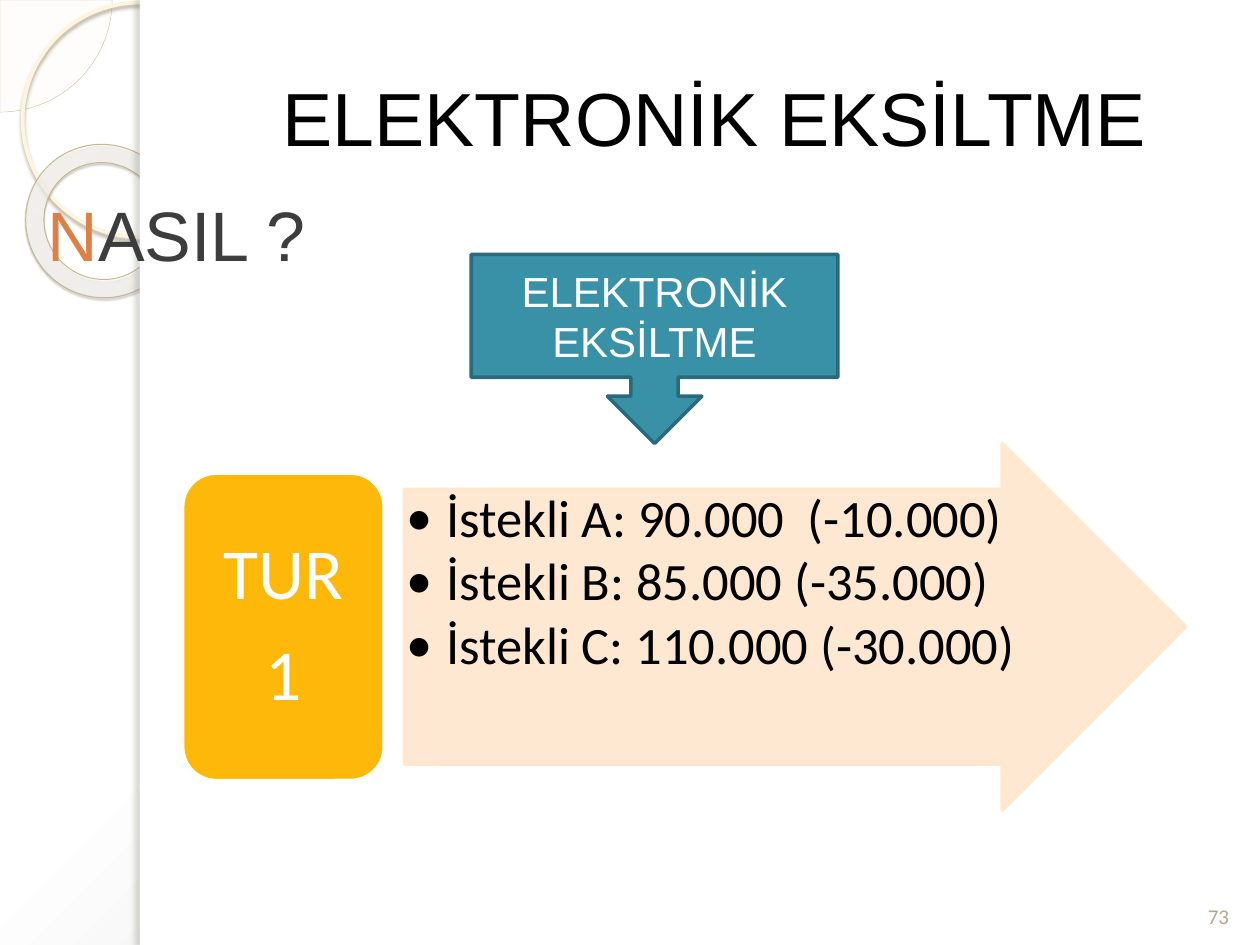
from lxml.etree import SubElement
from pptx import Presentation
from pptx.dml.color import RGBColor
from pptx.enum.shapes import MSO_SHAPE
from pptx.enum.text import MSO_ANCHOR, MSO_AUTO_SIZE, PP_ALIGN
from pptx.oxml import parse_xml
from pptx.oxml.ns import nsdecls, qn
from pptx.util import Inches, Pt


def rgb(color):
    return RGBColor.from_string(color)


def inches(box):
    return [Inches(length) for length in box]


def set_alpha(fill_format_parent, percent):
    """Make every solid colour below the given element translucent."""
    for color in fill_format_parent.iter(qn("a:srgbClr")):
        SubElement(color, qn("a:alpha")).set("val", str(percent * 1000))


def gradient_xml(stops, focus):
    """Circular gradient; stops are (position, colour, opacity) in percent."""
    stop_xml = "".join(
        f'<a:gs pos="{position * 1000}"><a:srgbClr val="{color}">'
        f'<a:alpha val="{opacity * 1000}"/></a:srgbClr></a:gs>'
        for position, color, opacity in stops)
    edges = " ".join(f'{side}="{value * 1000}"' for side, value in zip("ltrb", focus))
    return parse_xml(
        f'<a:gradFill {nsdecls("a")} rotWithShape="1"><a:gsLst>{stop_xml}</a:gsLst>'
        f'<a:path path="circle"><a:fillToRect {edges}/></a:path></a:gradFill>')


def replace_solid_fill(parent, gradient):
    solid = parent.find(qn("a:solidFill"))
    parent.replace(solid, gradient)


def add_shadow(shape, color, opacity, blur, distance, angle):
    effects = shape._element.spPr.find(qn("a:effectLst"))
    effects.append(parse_xml(
        f'<a:outerShdw {nsdecls("a")} blurRad="{Pt(blur)}" dist="{Pt(distance)}" '
        f'dir="{angle * 60000}" algn="tl" rotWithShape="0"><a:srgbClr val="{color}">'
        f'<a:alpha val="{opacity * 1000}"/></a:srgbClr></a:outerShdw>'))


def add_block(slide, kind, box, fill=None, line=None, width=1, adjust=()):
    block = slide.shapes.add_shape(kind, *inches(box))
    block.shadow.inherit = False
    for index, value in enumerate(adjust):
        block.adjustments[index] = value
    if fill:
        block.fill.solid()
        block.fill.fore_color.rgb = rgb(fill)
    else:
        block.fill.background()
    if line:
        block.line.color.rgb = rgb(line)
        block.line.width = Pt(width)
    else:
        block.line.fill.background()
    return block


def write(shape, paragraphs, size, color, font="Arial", align=PP_ALIGN.CENTER,
          anchor=MSO_ANCHOR.MIDDLE, margins=(0.1, 0.05), spacing=1, before=0, after=0):
    """Fill a shape; a paragraph is a text or a list of (text, colour) runs."""
    frame = shape.text_frame
    frame.word_wrap = True
    frame.auto_size = MSO_AUTO_SIZE.NONE
    frame.vertical_anchor = anchor
    frame.margin_left = frame.margin_right = Inches(margins[0])
    frame.margin_top = frame.margin_bottom = Inches(margins[1])
    for index, content in enumerate(paragraphs):
        paragraph = frame.add_paragraph() if index else frame.paragraphs[0]
        paragraph.alignment = align
        paragraph.line_spacing = spacing
        paragraph.space_before, paragraph.space_after = Pt(before), Pt(after)
        runs = [(content, color)] if isinstance(content, str) else content
        for text, run_color in runs:
            run = paragraph.add_run()
            run.text = text
            run.font.size, run.font.name = Pt(size), font
            run.font.color.rgb = rgb(run_color)


def place(placeholder, box):
    """Move a placeholder to its box and to the front."""
    placeholder.left, placeholder.top, placeholder.width, placeholder.height = inches(box)
    tree = placeholder._element.getparent()
    tree.append(placeholder._element)


def add_bullets(shape, indent):
    for paragraph in shape.text_frame.paragraphs:
        properties = paragraph._p.get_or_add_pPr()
        properties.set("marL", str(Inches(indent)))
        properties.set("indent", str(-Inches(indent)))
        SubElement(properties, qn("a:buFont")).set("typeface", "Calibri")
        SubElement(properties, qn("a:buChar")).set("char", "•")


def draw_backdrop(slide, box):
    left, top, width, height = box
    # Page gradient
    background = slide.background.fill
    background.solid()
    background.fore_color.rgb = rgb("FFFFFF")
    replace_solid_fill(
        slide._element.cSld.bg.bgPr,
        gradient_xml([(0, "FFFFFF", 100), (40, "FFFFFF", 100), (100, "C5C5C5", 100)],
                     (-24, -20, 124, 120)))
    # Corner quadrant and rings
    radius = 0.89
    quadrant = add_block(slide, MSO_SHAPE.PIE,
                         (left - radius, top - radius, 2 * radius, 2 * radius),
                         fill="FEFAF4", line="D3C39F", width=0.25, adjust=(0, 54))
    set_alpha(quadrant._element.spPr.find(qn("a:solidFill")), 33)
    circle = add_block(slide, MSO_SHAPE.OVAL, (left + 0.18, top + 0.02, 1.86, 1.86),
                       line="FFF5DE", width=2.15)
    add_shadow(circle, "B0A68F", 85, 2, 2, 90)
    ring = add_block(slide, MSO_SHAPE.DONUT, (left + 0.2, top + 1.15, 1.23, 1.21),
                     fill="FFFCF6", line="C7B893", width=0.58, adjust=(0.12,))
    ring.rotation = 38.6
    replace_solid_fill(
        ring._element.spPr,
        gradient_xml([(0, "FFFCF6", 70), (70, "FFFEFB", 55), (100, "F0D28E", 60)],
                     (-408, -50, 508, 150)))
    add_shadow(ring, "5A5444", 35, 1, 1.2, 75)
    # Content panel with its shaded edge
    strip = 1.11
    add_block(slide, MSO_SHAPE.RECTANGLE, (left + strip, top, width - strip, height), "FFFFFF")
    edge = add_block(slide, MSO_SHAPE.RECTANGLE, (left + strip, top, 0.08, height), "FFFFFF")
    add_shadow(edge, "736F63", 25, 3, 3, 180)


def draw_headings(slide, box):
    left, top, width, height = box
    title = slide.shapes.title
    place(title, (left + 1.29, top, 8.2, 1.25))
    write(title, ["ELEKTRONİK EKSİLTME"], 43, "000000")
    question = slide.shapes.add_textbox(*inches((left, top + 1.17, width, height - 1.17)))
    write(question, [[("N", "DD8047"), ("ASIL ?", "3D3D3D")]], 40, "3D3D3D",
          align=PP_ALIGN.JUSTIFY, anchor=MSO_ANCHOR.TOP, before=4, after=6)


def draw_callout(slide, box):
    callout = add_block(slide, MSO_SHAPE.DOWN_ARROW_CALLOUT, box, "3891A7", "296B7C", 2)
    write(callout, ["ELEKTRONİK EKSİLTME"], 24, "FFFFFF")


def draw_round(slide, box, label, bids):
    left, top, width, height = box
    # Arrow behind the bids
    arrow_left = left + 1.76
    arrow = add_block(slide, MSO_SHAPE.RIGHT_ARROW,
                      (arrow_left, top, width - 1.76, height),
                      "FFE6CC", "FFE6CC", 2, adjust=(0.75, 0.5))
    set_alpha(arrow._element.spPr, 90)
    # Bids of the round
    bid_list = slide.placeholders[1]
    place(bid_list, (arrow_left, top + height / 8, 5.11, height * 0.75))
    write(bid_list, bids, 30, "000000", font="Calibri", align=PP_ALIGN.LEFT,
          anchor=MSO_ANCHOR.TOP, margins=(0.02, 0.02), spacing=0.9, after=4)
    add_bullets(bid_list, 0.31)
    # Round label
    badge_height = 2.44
    badge = add_block(slide, MSO_SHAPE.ROUNDED_RECTANGLE,
                      (left, top + (height - badge_height) / 2, 1.6, badge_height),
                      "FEB80A", "FFFFFF", 2)
    write(badge, label, 41, "FFFFFF", font="Calibri", margins=(0.17, 0.09),
          spacing=0.9, after=13)


def draw_page_number(slide, box):
    number = slide.shapes.add_textbox(*inches(box))
    write(number, ["73"], 12, "B6A98A", font="Calibri", anchor=MSO_ANCHOR.BOTTOM)


def main():
    deck = Presentation()
    deck.slide_width, deck.slide_height = Inches(10), Inches(7.5)
    slide = deck.slides.add_slide(deck.slide_layouts[1])
    draw_backdrop(slide, (0, 0, 10, 7.5))
    draw_headings(slide, (0.28, 0.3, 9.61, 2.84))
    draw_page_number(slide, (9.42, 6.9, 0.5, 0.52))
    draw_callout(slide, (3.74, 2.02, 2.91, 1.5))
    draw_round(slide, (1.45, 3.52, 7.96, 2.91), ["TUR", "1"],
               ["İstekli A: 90.000  (-10.000)",
                "İstekli B: 85.000 (-35.000)",
                "İstekli C: 110.000 (-30.000)"])
    deck.save("out.pptx")


if __name__ == "__main__":
    main()
